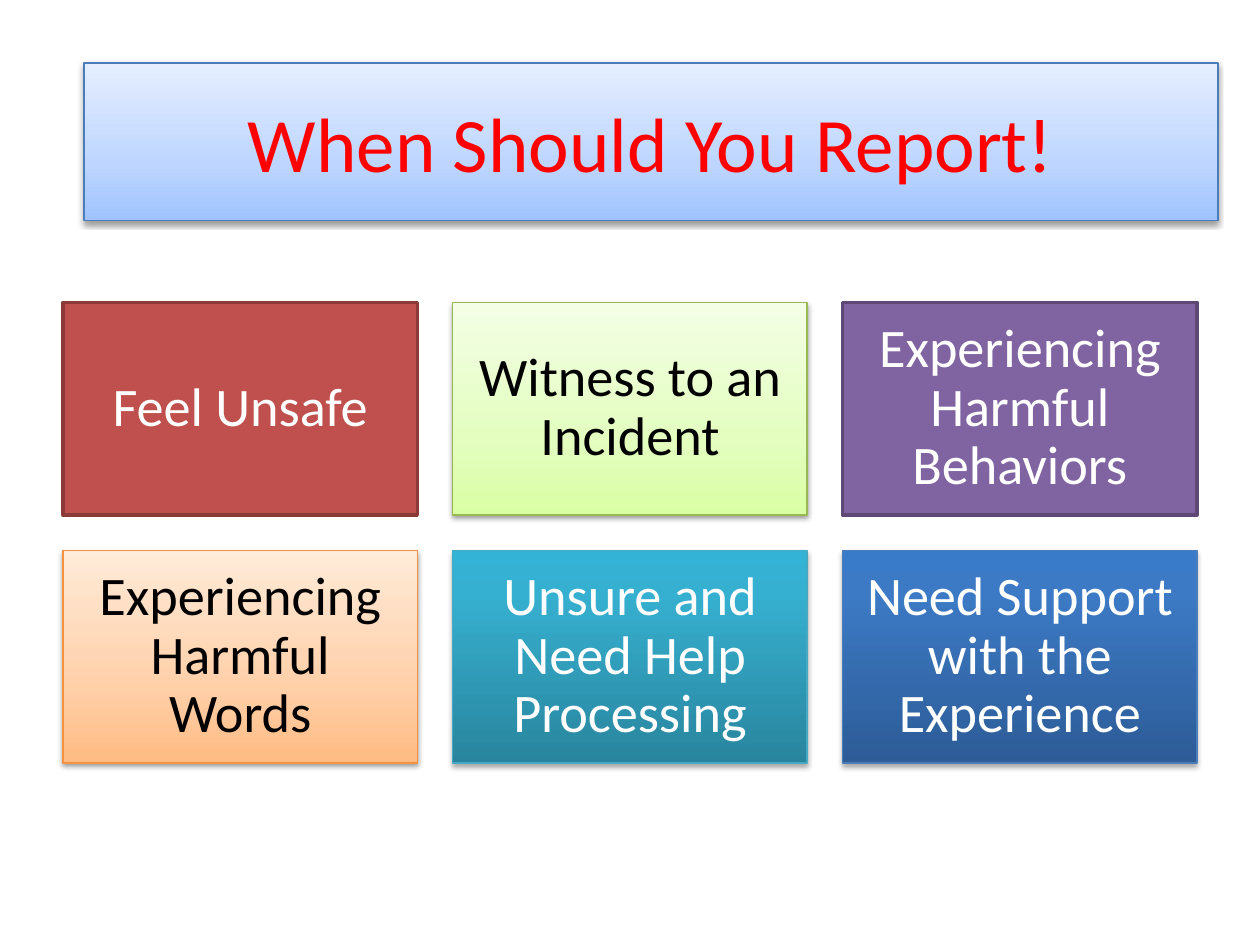
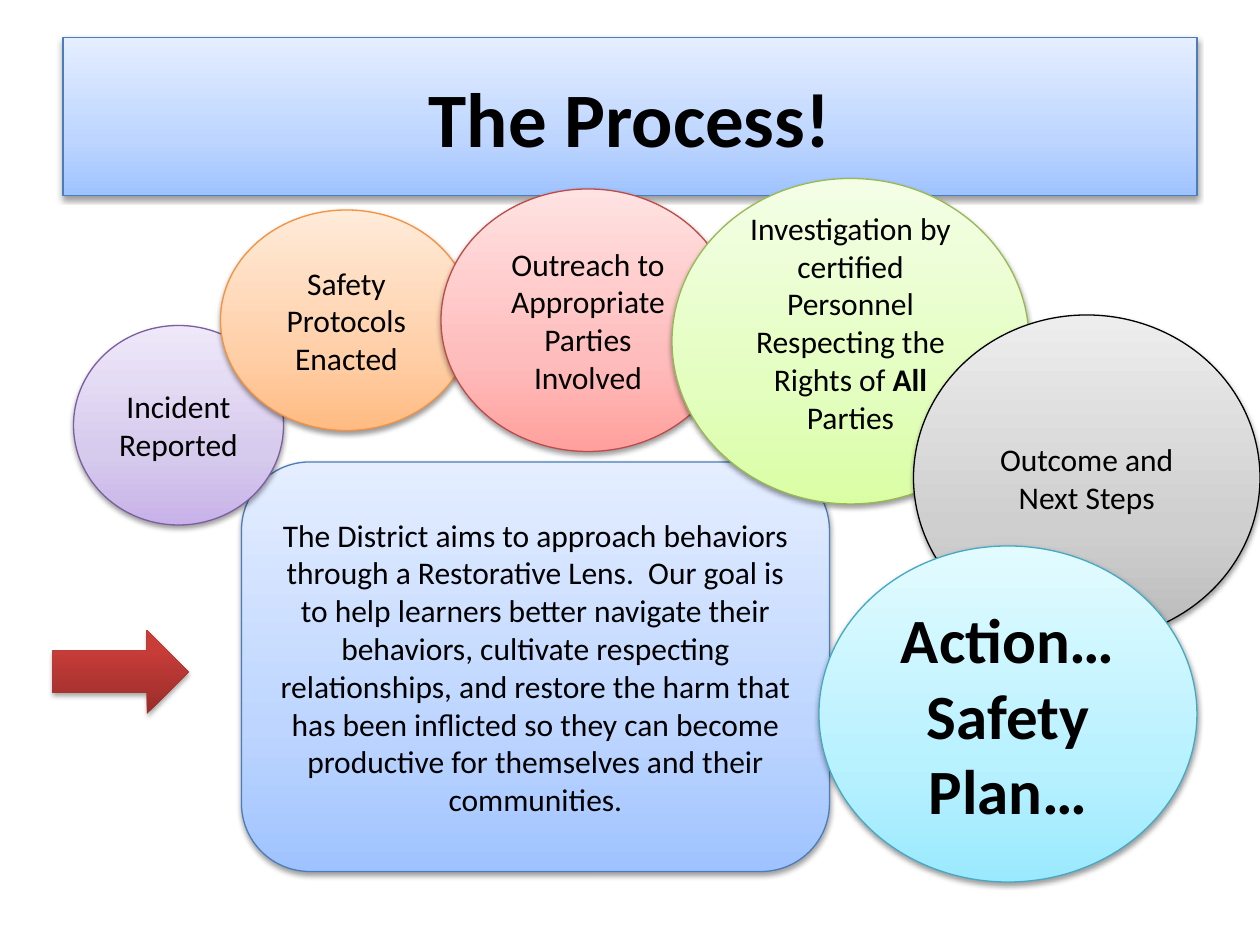
from lxml.etree import SubElement
from pptx import Presentation
from pptx.dml.color import RGBColor
from pptx.enum.shapes import MSO_SHAPE as Preset
from pptx.enum.text import MSO_ANCHOR as Anchor, MSO_AUTO_SIZE as AutoSize, PP_ALIGN as Align
from pptx.oxml.ns import qn
from pptx.util import Inches, Pt

rgb = RGBColor.from_string
FONT = "Calibri"
BLACK, WHITE, RED = "000000", "FFFFFF", "FF0000"
COLUMNS, ROWS = 120, 90
UNIT = Inches(10) // COLUMNS

STYLES = {
    "pale blue": (["9FC3FF", "BDD5FF", "E4EEFF"], 35, "4A7DBA"),
    "pale green": (["DAFEA4", "E3FEBF", "F4FEE6"], 35, "97B853"),
    "pale orange": (["FFBB82", "FFCFA8", "FFEBD9"], 35, "F5913F"),
    "pale purple": (["C8B2E9", "D6CAED", "EFE8FA"], 35, "7C5F9F"),
    "pale red": (["FFA09D", "FFBCBC", "FFE2E2"], 35, "BD4B48"),
    "pale grey": (["BABABA", "CFCFCF", "EDEDED"], 35, "000000"),
    "pale aqua": (["9BE9FF", "B8F1FF", "E2FBFF"], 35, "45A9C4"),
    "deep aqua": (["29859E", "36B0D0", "33B3D5"], 80, "45A9C4"),
    "deep blue": (["2D5C97", "3C7AC5", "397BC9"], 80, "4A7DBA"),
    "deep red": (["992D2B", "C93D39", "CD3A36"], 80, None),
    "flat red": (["C0504D"], None, "8C3A38"),
    "flat purple": (["8064A2"], None, "5D4876"),
}


def paint(shape, style):
    colours, middle, outline = STYLES[style]
    shape.shadow.inherit = False
    if outline:
        shape.line.color.rgb = rgb(outline)
        shape.line.width = Pt(0.75 if middle else 2)
    else:
        shape.line.fill.background()
    if not middle:
        shape.fill.solid()
        shape.fill.fore_color.rgb = rgb(colours[0])
        return
    shape.fill.gradient()
    shape.fill.gradient_angle = 90
    properties = shape._element.spPr
    stops = properties.find(qn("a:gradFill")).find(qn("a:gsLst"))
    stops.clear()
    for position, colour in zip((0, middle, 100), colours):
        stop = SubElement(stops, qn("a:gs"), pos=str(position * 1000))
        SubElement(stop, qn("a:srgbClr"), val=colour)
    shadow = SubElement(
        properties.find(qn("a:effectLst")), qn("a:outerShdw"),
        blurRad=str(Pt(3.1)), dist=str(Pt(1.6 if middle == 35 else 1.8)),
        dir="5400000", rotWithShape="0")
    shade = SubElement(shadow, qn("a:srgbClr"), val=BLACK)
    SubElement(shade, qn("a:alpha"), val="38000" if middle == 35 else "35000")


def write(shape, paragraphs, size, colour=BLACK, spacing=1.0, margins=(0.1, 0.05, 0.1, 0.05)):
    frame = shape.text_frame
    frame.word_wrap = True
    frame.auto_size = AutoSize.NONE
    frame.vertical_anchor = Anchor.MIDDLE
    (frame.margin_left, frame.margin_top,
     frame.margin_right, frame.margin_bottom) = [Inches(margin) for margin in margins]
    for number, spans in enumerate(paragraphs):
        para = frame.add_paragraph() if number else frame.paragraphs[0]
        para.alignment = Align.CENTER
        para.line_spacing = spacing
        for text, bold in spans:
            span = para.add_run()
            span.text = text
            span.font.name = FONT
            span.font.size = Pt(size)
            span.font.bold = bold
            span.font.color.rgb = rgb(colour)


deck = Presentation()
deck.slide_width, deck.slide_height = COLUMNS * UNIT, ROWS * UNIT

pages = []
for heading, left, top, colour, bold in [
    ("When Should You Report!", 8, 6, RED, False),
    ("The Process!", 6, 3.6, BLACK, True),
]:
    page = deck.slides.add_slide(deck.slide_layouts[5])
    title = page.shapes.title
    title.left, title.top = round(left * UNIT), round(top * UNIT)
    title.width, title.height = 108 * UNIT, 15 * UNIT
    paint(title, "pale blue")
    write(title, [[(heading, bold)]], 44, colour)
    pages.append(page)
reasons_page, process_page = pages

reasons = [
    ("Feel Unsafe", "flat red", WHITE),
    ("Witness to an Incident", "pale green", BLACK),
    ("Experiencing Harmful Behaviors", "flat purple", WHITE),
    ("Experiencing Harmful Words", "pale orange", BLACK),
    ("Unsure and Need Help Processing", "deep aqua", WHITE),
    ("Need Support with the Experience", "deep blue", WHITE),
]
tile_width = 108 / 3.2
tile_height = tile_width * 0.6
gap = tile_width * 0.1
for number, (reason, style, colour) in enumerate(reasons):
    row, column = divmod(number, 3)
    area = (6 + column * (tile_width + gap), 28.8 + row * (tile_height + gap),
            tile_width, tile_height)
    tile = reasons_page.shapes.add_shape(
        Preset.RECTANGLE, *[round(length * UNIT) for length in area])
    paint(tile, style)
    write(tile, [[(reason, False)]], 31, colour, 0.9, (0.13, 0.13, 0.13, 0.13))

goal = (
    "The District aims to approach behaviors through a Restorative Lens.  Our goal is "
    "to help learners better navigate their behaviors, cultivate respecting relationships, "
    "and restore the harm that has been inflicted so they can become productive for "
    "themselves and their communities."
)
investigation = [
    ("Investigation by certified Personnel Respecting the Rights of ", False),
    ("All", True),
    (" Parties", False),
]
action = [[("Action…", True)], [("Safety Plan…", True)]]
circle = Preset.FLOWCHART_CONNECTOR
steps = [
    (Preset.ROUNDED_RECTANGLE, (23, 44, 56, 39), "pale blue", [[(goal, False)]], 18, 0.05),
    (Preset.RIGHT_ARROW, (5, 60, 13, 8), "deep red", [], 18, 0.05),
    (circle, (7, 31, 20, 19), "pale purple", [[("Incident Reported", False)]], 18, 0.05),
    (circle, (21, 20, 24, 21), "pale orange", [[("Safety Protocols Enacted", False)]], 18, 0.05),
    (circle, (42, 18, 28, 25), "pale red",
     [[("Outreach to Appropriate Parties Involved", False)]], 18, 0.05),
    (circle, (64, 17, 34, 31), "pale green", [investigation], 18, 0.35),
    (circle, (87, 30, 33, 31), "pale grey", [[("Outcome and Next Steps", False)]], 18, 0.05),
    (circle, (78, 52, 36, 32), "pale aqua", action, 36, 0.05),
]
for preset, area, style, paragraphs, size, bottom in steps:
    step = process_page.shapes.add_shape(preset, *[length * UNIT for length in area])
    paint(step, style)
    write(step, paragraphs, size, margins=(0.1, 0.05, 0.1, bottom))

deck.save("out.pptx")
